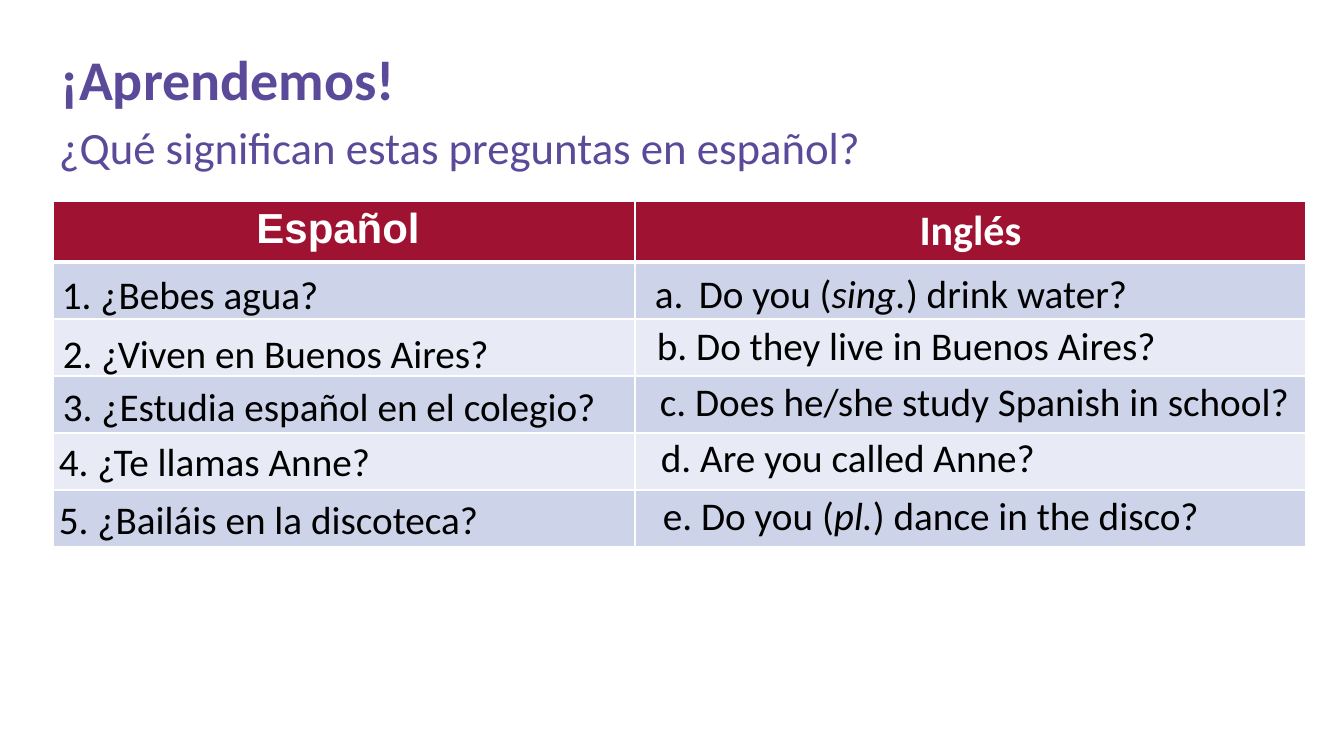
from lxml import etree
from pptx import Presentation, util as u
from pptx.dml.color import RGBColor
from pptx.enum import text as t
from pptx.oxml.ns import qn

PURPLE = RGBColor(0x5B, 0x49, 0x9A)
CRIMSON = RGBColor(0x9F, 0x12, 0x31)
BLUE = RGBColor(0xCD, 0xD4, 0xEA)
PALE = RGBColor(0xE8, 0xEB, 0xF5)
WHITE = RGBColor(0xFF, 0xFF, 0xFF)
BLACK = RGBColor(0, 0, 0)

HEADINGS = [("Español ", "Arial"), ("Inglés", "Calibri")]
COLUMNS = [582, 671]
HEADER_HEIGHT, ROW_HEIGHT = 61, 57

# Each entry: offset from its cell, width, text parts (every second one italic)
QUESTIONS = [
    (-1, 3, 323, ["1. ¿Bebes agua?"]),
    (0, 5, 519, ["2. ¿Viven en Buenos Aires?"]),
    (0, 1, 594, ["3. ¿Estudia español en el colegio?"]),
    (-4, -1, 585, ["4. ¿Te llamas Anne?"]),
    (-4, 0, 585, ["5. ¿Bailáis en la discoteca?"]),
]
ANSWERS = [
    (4, 2, 519, ["Do you (", "sing.", ") drink water?"]),
    (12, -3, 574, ["b. Do they live in Buenos Aires?"]),
    (15, -4, 680, ["c. Does he/she study Spanish in school?"]),
    (16, -5, 680, ["d. Are you called Anne?"]),
    (18, -4, 653, ["e. Do you (", "pl.", ") dance in the disco?"]),
]


def px(length):
    return u.Emu(round(length * 12192000 / 1344))


def write(para, parts, size=28, color=BLACK, font="Calibri", bold=False):
    for index, part in enumerate(parts):
        span = para.add_run()
        span.text = part
        span.font.size = u.Pt(size)
        span.font.name = font
        span.font.bold = bold
        span.font.italic = index % 2 == 1
        span.font.color.rgb = color


def add_text(page, box, parts, grow=False, indent=None, lettered=False, **style):
    frame = page.shapes.add_textbox(*map(px, box)).text_frame
    frame.word_wrap = True
    if grow:
        frame.auto_size = t.MSO_AUTO_SIZE.SHAPE_TO_FIT_TEXT
    para = frame.paragraphs[0]
    if indent:
        props = para._p.get_or_add_pPr()
        props.set("marL", str(px(indent[0])))
        props.set("indent", str(px(indent[1])))
        if lettered:
            tint = etree.SubElement(props, qn("a:buClr"))
            etree.SubElement(tint, qn("a:srgbClr"), val=str(BLACK))
            etree.SubElement(props, qn("a:buAutoNum"), type="alphaLcPeriod")
    write(para, parts, **style)


def style_cell(cell, color, top, bottom):
    # Borders come before the fill in the cell properties
    props = cell._tc.get_or_add_tcPr()
    for side, width in (("L", 1), ("R", 1), ("T", top), ("B", bottom)):
        line = etree.SubElement(props, qn("a:ln" + side), w=str(u.Pt(width)))
        fill = etree.SubElement(line, qn("a:solidFill"))
        etree.SubElement(fill, qn("a:srgbClr"), val=str(WHITE))
    cell.fill.solid()
    cell.fill.fore_color.rgb = color
    cell.margin_left = cell.margin_right = px(8)
    cell.margin_top = cell.margin_bottom = px(5)


def add_heading(page, left, top):
    add_text(page, (left + 2, top, 1159, 69), ["¡Aprendemos!"],
             indent=(44, -44), size=40, color=PURPLE, bold=True)
    add_text(page, (left, top + 75, 1311, 124),
             ["¿Qué significan estas preguntas en español?"],
             size=32, color=PURPLE)


def add_grid(page, left, top):
    count = len(QUESTIONS)
    height = HEADER_HEIGHT + count * ROW_HEIGHT
    box = (left, top, sum(COLUMNS), height)
    table = page.shapes.add_table(count + 1, 2, *map(px, box)).table
    for column, width in zip(table.columns, COLUMNS):
        column.width = px(width)
    for index, row in enumerate(table.rows):
        row.height = px(ROW_HEIGHT if index else HEADER_HEIGHT)
        color = (BLUE if index % 2 else PALE) if index else CRIMSON
        for cell in row.cells:
            style_cell(cell, color, top=3 if index == 1 else 1,
                       bottom=1 if index else 3)
    for cell, (heading, font) in zip(table.rows[0].cells, HEADINGS):
        para = cell.text_frame.paragraphs[0]
        para.alignment = t.PP_ALIGN.CENTER
        write(para, [heading], size=30, color=WHITE, font=font, bold=True)

    # Sentences laid over the empty cells
    for start, sentences in ((left, QUESTIONS), (left + COLUMNS[0], ANSWERS)):
        for index, (dx, dy, width, parts) in enumerate(sentences):
            row_top = top + HEADER_HEIGHT + index * ROW_HEIGHT
            first_answer = sentences is ANSWERS and index == 0
            add_text(page, (start + dx, row_top + dy, width, ROW_HEIGHT), parts,
                     grow=True, lettered=first_answer,
                     indent=(50, -44) if first_answer else None)


def main():
    deck = Presentation()
    deck.slide_width, deck.slide_height = px(1344), px(756)
    page = deck.slides.add_slide(deck.slide_layouts[6])
    add_heading(page, 49, 40)
    add_grid(page, 53, 201)
    deck.save("out.pptx")


if __name__ == "__main__":
    main()
